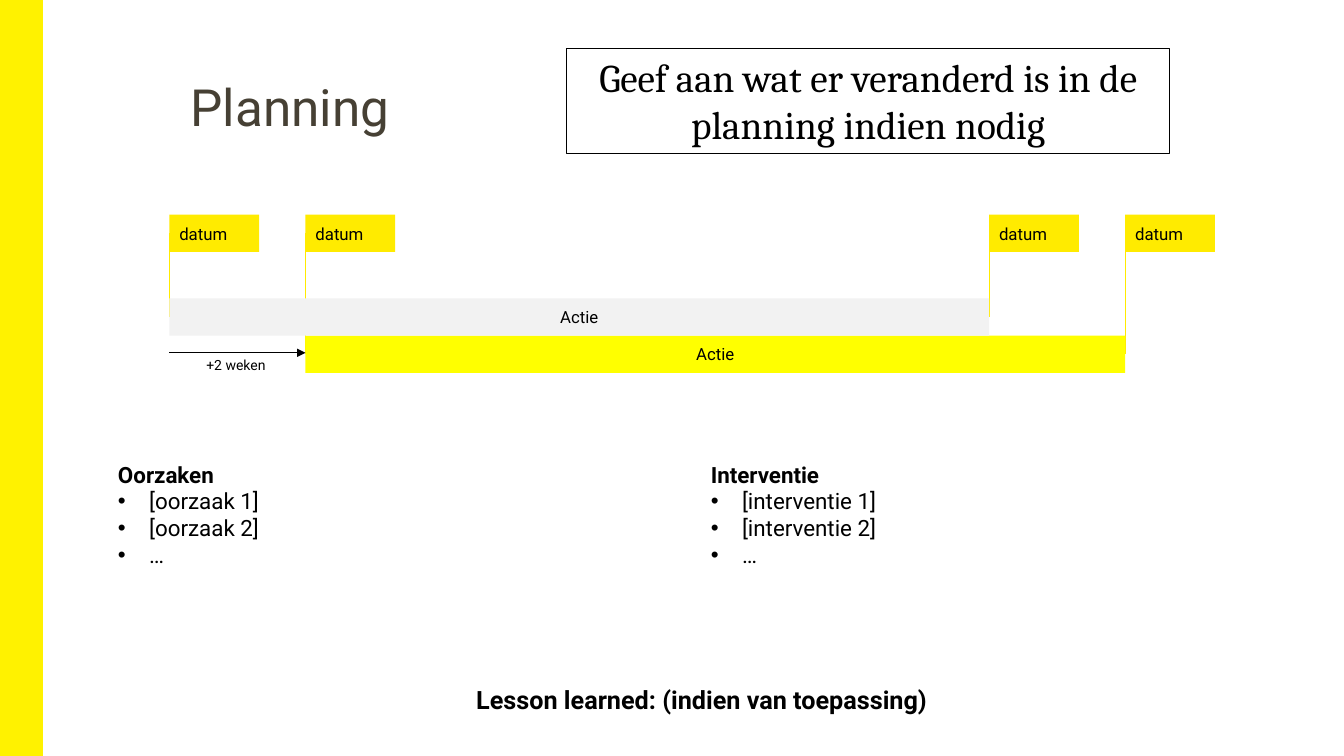
from typing import NamedTuple, Optional

import lxml.etree
import pptx
import pptx.dml.color
import pptx.enum.shapes
import pptx.enum.text
import pptx.oxml.ns
import pptx.util

Inches = pptx.util.Inches
Pt = pptx.util.Pt
Align = pptx.enum.text.PP_ALIGN
Anchor = pptx.enum.text.MSO_ANCHOR
AutoSize = pptx.enum.text.MSO_AUTO_SIZE
RECT = pptx.enum.shapes.MSO_SHAPE.RECTANGLE
STRAIGHT = pptx.enum.shapes.MSO_CONNECTOR.STRAIGHT
qn = pptx.oxml.ns.qn

FONT = "Roboto"
BLACK = "000000"
FLAG_YELLOW = "FFEB00"
FLAG_TOP, FLAG_WIDTH, ROW_HEIGHT = 2.13, 0.89, 0.37
OLD_START, DELAY, DURATION = 1.68, 1.35, 8.13
NEW_START = OLD_START + DELAY
OLD_TOP = 2.96
NEW_TOP = OLD_TOP + ROW_HEIGHT
LEFT_SIDE, RIGHT_SIDE = 1, 3


class Box(NamedTuple):
    left: float
    top: float
    width: float
    height: float


class Bar(NamedTuple):
    start: float
    top: float
    fill: str


class Column(NamedTuple):
    box: Box
    heading: str
    items: list[str]


BARS = [
    Bar(NEW_START, NEW_TOP, "FFFF00"),
    Bar(OLD_START, OLD_TOP, "F2F2F2"),
]
COLUMNS = [
    Column(Box(1.07, 4.52, 5.31, 1.18), "Oorzaken",
           ["[oorzaak 1]", "[oorzaak 2]", "…"]),
    Column(Box(6.95, 4.52, 5.74, 1.18), "Interventie",
           ["[interventie 1]", "[interventie 2]", "…"]),
]


def rgb(color: str) -> pptx.dml.color.RGBColor:
    return pptx.dml.color.RGBColor.from_string(color)


def place(sp, box: Box) -> None:
    sp.left, sp.top, sp.width, sp.height = map(Inches, box)


def add_run(p, text: str, size: float, color: str = BLACK,
            bold: bool = False, font: str = FONT) -> None:
    r = p.add_run()
    r.text = text
    r.font.size = Pt(size)
    r.font.name = font
    r.font.bold = bold
    r.font.color.rgb = rgb(color)


def add_rect(s, box: Box, fill: Optional[str] = None,
             line: Optional[str] = None, line_width: float = 1):
    sp = s.shapes.add_shape(RECT, *map(Inches, box))
    sp.shadow.inherit = False
    if fill:
        sp.fill.solid()
        sp.fill.fore_color.rgb = rgb(fill)
    else:
        sp.fill.background()
    if line:
        sp.line.color.rgb = rgb(line)
        sp.line.width = Pt(line_width)
    else:
        sp.line.fill.background()
    return sp


def write_line(sp, text: str, size: float, align: Align = Align.CENTER,
               anchor: Anchor = Anchor.MIDDLE, bold: bool = False,
               font: str = FONT) -> None:
    """Fill a shape with one wrapped paragraph."""
    tf = sp.text_frame
    tf.word_wrap = True
    tf.vertical_anchor = anchor
    p = tf.paragraphs[0]
    p.alignment = align
    add_run(p, text, size, bold=bold, font=font)


def add_label(s, box: Box, text: str, size: float, bold: bool = False) -> None:
    sp = s.shapes.add_textbox(*map(Inches, box))
    write_line(sp, text, size, anchor=Anchor.TOP, bold=bold)
    sp.text_frame.auto_size = AutoSize.SHAPE_TO_FIT_TEXT


def add_line(s, x1: float, y1: float, x2: float, y2: float,
             color: str, arrow: bool = False):
    line = s.shapes.add_connector(STRAIGHT, *map(Inches, (x1, y1, x2, y2)))
    line.line.color.rgb = rgb(color)
    line.line.width = Pt(0.5)
    if arrow:
        ln = line.line._get_or_add_ln()
        lxml.etree.SubElement(ln, qn("a:tailEnd"), type="triangle")
    lxml.etree.SubElement(line._element.spPr, qn("a:effectLst"))
    return line


def set_bullet(p, char: Optional[str] = None) -> None:
    """Give a paragraph a hanging bullet, or none."""
    pPr = p._p.get_or_add_pPr()
    indent = Inches(0.31) if char else 0
    pPr.set("marL", str(indent))
    pPr.set("indent", str(-indent))
    if char:
        lxml.etree.SubElement(pPr, qn("a:buFont"), typeface="Arial")
        lxml.etree.SubElement(pPr, qn("a:buChar"), char=char)
    else:
        lxml.etree.SubElement(pPr, qn("a:buNone"))


def fill_column(sp, column: Column) -> None:
    place(sp, column.box)
    tf = sp.text_frame
    tf.word_wrap = True
    tf.auto_size = AutoSize.SHAPE_TO_FIT_TEXT
    for i, text in enumerate([column.heading, *column.items]):
        p = tf.add_paragraph() if i else tf.paragraphs[0]
        set_bullet(p, "•" if i else None)
        p.space_before = Pt(0)
        add_run(p, text, 16, bold=i == 0)


def fill_title(sp) -> None:
    place(sp, Box(1.89, 0.83, 10.81, 1.22))
    tf = sp.text_frame
    tf.margin_left = tf.margin_top = tf.margin_right = tf.margin_bottom = 0
    tf.vertical_anchor = Anchor.TOP
    tf.auto_size = AutoSize.NONE
    p = tf.paragraphs[0]
    p.alignment = Align.LEFT
    p.line_spacing = Pt(38)
    add_run(p, "Planning", 36.6, "464034")


def draw_planning(s) -> None:
    """Draw both bars with a date flag tied to each end."""
    ends = [(bar, side, bar.start + (DURATION if side == RIGHT_SIDE else 0))
            for bar in BARS for side in (LEFT_SIDE, RIGHT_SIDE)]
    half = ROW_HEIGHT / 2
    poles = [add_line(s, x, FLAG_TOP + half, x, bar.top + half, FLAG_YELLOW)
             for bar, _, x in ends]
    bar_shapes = {}
    for bar in BARS:
        sp = add_rect(s, Box(bar.start, bar.top, DURATION, ROW_HEIGHT), bar.fill)
        write_line(sp, "Actie", 12)
        bar_shapes[bar] = sp
    for pole, (bar, side, x) in zip(poles, ends):
        flag = add_rect(s, Box(x, FLAG_TOP, FLAG_WIDTH, ROW_HEIGHT), FLAG_YELLOW)
        write_line(flag, "datum", 12, Align.LEFT)
        pole.begin_connect(flag, LEFT_SIDE)
        pole.end_connect(bar_shapes[bar], side)
    add_line(s, OLD_START, 3.5, NEW_START, 3.5, BLACK, arrow=True)
    add_label(s, Box(1.91, 3.49, 0.86, 0.27), "+2 weken", 10)


def main() -> None:
    prs = pptx.Presentation()
    prs.slide_width, prs.slide_height = Inches(13.33), Inches(7.5)
    s = prs.slides.add_slide(prs.slide_layouts.get_by_name("Two Content"))
    title, *bodies = s.placeholders
    add_rect(s, Box(0, 0, 0.42, 7.5), "FFF200", "FFF200")
    draw_planning(s)
    fill_title(title)
    for sp, column in zip(bodies, COLUMNS):
        fill_column(sp, column)
    add_label(s, Box(1.07, 6.74, 11.78, 0.4),
              "Lesson learned: (indien van toepassing)", 18, bold=True)
    note = add_rect(s, Box(5.62, 0.48, 5.98, 1.04), line=BLACK, line_width=0.75)
    write_line(note, "Geef aan wat er veranderd is in de planning indien nodig",
               28, anchor=Anchor.TOP, font="Cambria")
    note.text_frame.auto_size = AutoSize.SHAPE_TO_FIT_TEXT
    prs.save("out.pptx")


if __name__ == "__main__":
    main()
